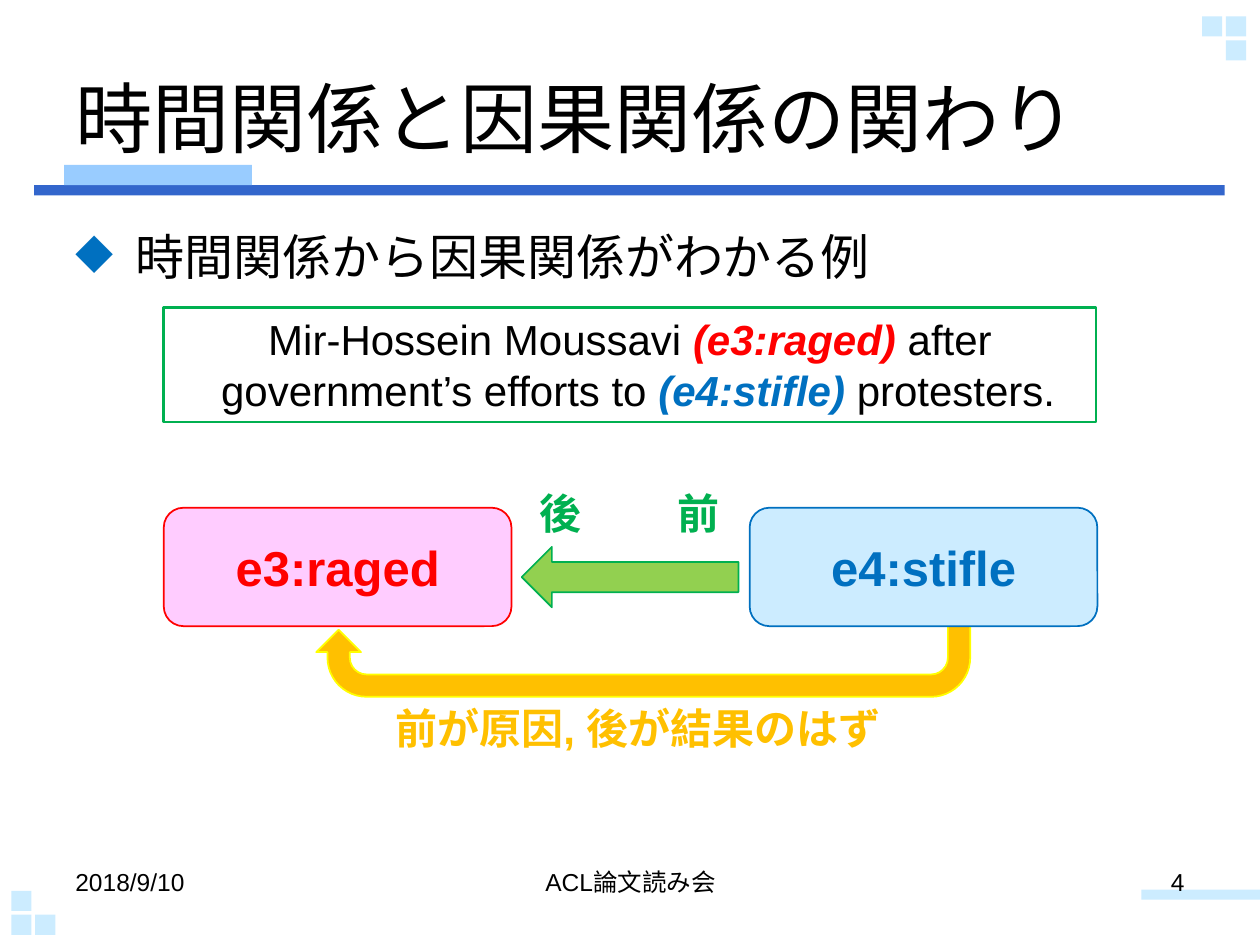
from lxml import etree
from pptx import Presentation
from pptx.dml.color import RGBColor
from pptx.enum import shapes, text
from pptx.oxml import ns
from pptx.util import Inches, Pt

COLORS = {
    "black": "000000", "bar": "3366CC", "tab": "99CCFF", "pale": "CCECFF",
    "pink": "FFCCFF", "red": "FF0000", "blue": "0070C0", "green": "00B050",
    "lime": "92D050", "gold": "FFC000", "yellow": "FFFF00",
}
LATIN, JAPANESE = "Arial", "Noto Sans CJK JP"
SHAPE, ALIGN, ANCHOR = shapes.MSO_SHAPE, text.PP_ALIGN, text.MSO_ANCHOR


def color(name):
    """Look up a named colour."""
    return RGBColor.from_string(COLORS[name])


def add_box(slide, kind, box, fill=None, line=None, width=1):
    """Add a flat preset shape in box (left, top, width, height in inches)."""
    shape = slide.shapes.add_shape(kind, *map(Inches, box))
    shape.shadow.inherit = False
    if fill:
        shape.fill.solid()
        shape.fill.fore_color.rgb = color(fill)
    else:
        shape.fill.background()
    if line:
        shape.line.color.rgb = color(line)
        shape.line.width = Pt(width)
    else:
        shape.line.fill.background()
    return shape


def format_run(run, size, tint="black", font=LATIN, bold=False, italic=False):
    """Set the look of one run, with a Japanese fallback font."""
    run.font.size, run.font.name = Pt(size), font
    run.font.bold, run.font.italic = bold, italic
    run.font.color.rgb = color(tint)
    properties = run._r.get_or_add_rPr()
    etree.SubElement(properties, ns.qn("a:ea")).set("typeface", JAPANESE)


def write(shape, words, size, align=ALIGN.LEFT, anchor=ANCHOR.TOP, **look):
    """Fill a shape with one formatted paragraph and return it."""
    frame = shape.text_frame
    frame.text = words
    frame.word_wrap = True
    frame.vertical_anchor = anchor
    paragraph = frame.paragraphs[0]
    paragraph.alignment = align
    for run in paragraph.runs:
        format_run(run, size, **look)
    return paragraph


def add_label(slide, box, words, size, **options):
    """Add a text box holding one paragraph."""
    return write(slide.shapes.add_textbox(*map(Inches, box)), words, size, **options)


def hang(paragraph, indent):
    """Give a paragraph a hanging indent in inches."""
    properties = paragraph._p.get_or_add_pPr()
    properties.set("marL", str(Inches(indent)))
    properties.set("indent", str(-Inches(indent)))
    return properties


def add_squares(slide, left, top, cells):
    """Place small corner squares on a grid of (column, row) cells."""
    size, pitch = 0.16, 0.19
    for column, row in cells:
        add_box(slide, SHAPE.RECTANGLE,
                (left + column * pitch, top + row * pitch, size, size), "pale")


def add_decoration(slide):
    """Draw the title rule, footer bar and corner squares."""
    for box, fill in [((0.27, 1.47, 9.45, 0.08), "bar"),
                      ((0.51, 1.31, 1.49, 0.16), "tab"),
                      ((9.06, 7.06, 0.94, 0.08), "pale")]:
        add_box(slide, SHAPE.RECTANGLE, box, fill)
    add_squares(slide, 9.54, 0.13, [(0, 0), (1, 0), (1, 1)])
    add_squares(slide, 0.09, 7.07, [(0, 0), (0, 1), (1, 1)])


def add_bullet(slide, box, words):
    """Add the diamond bullet line."""
    paragraph = add_label(slide, box, words, 28, font=JAPANESE)
    properties = hang(paragraph, 0.48)
    tint = etree.SubElement(properties, ns.qn("a:buClr"))
    etree.SubElement(tint, ns.qn("a:srgbClr")).set("val", COLORS["blue"])
    etree.SubElement(properties, ns.qn("a:buChar")).set("char", "◆")


def add_example(slide, box):
    """Add the framed example sentence with its marked events."""
    shape = add_box(slide, SHAPE.RECTANGLE, box, line="green", width=1.5)
    paragraph = write(shape, "", 24, align=ALIGN.CENTER)
    hang(paragraph, 0.13)
    for words, tint in [("Mir-Hossein Moussavi ", "black"), ("(e3:raged) ", "red"),
                        ("after government’s efforts to ", "black"),
                        ("(e4:stifle) ", "blue"), ("protesters.", "black")]:
        run = paragraph.add_run()
        run.text = words
        marked = tint != "black"
        format_run(run, 24, tint, bold=marked, italic=marked)


def add_relation(slide, left, top, width):
    """Draw the two events with their time arrow and cause arrow."""
    event_width, event_height = 2.76, 0.94
    cause = add_box(slide, SHAPE.U_TURN_ARROW,
                    (left + 1.21, top + 0.79, 5.19, 0.71), "gold", "yellow")
    cause.rotation = 180
    for x, words, fill, tint in [
            (left, "e3:raged", "pink", "red"),
            (left + width - event_width, "e4:stifle", "pale", "blue")]:
        event = add_box(slide, SHAPE.ROUNDED_RECTANGLE,
                        (x, top, event_width, event_height), fill, tint)
        write(event, words, 28, align=ALIGN.CENTER, anchor=ANCHOR.MIDDLE,
              tint=tint, bold=True)
    for x, words in [(2.88, "後"), (3.98, "前")]:
        add_label(slide, (left + x, top - 0.21, 0.54, 0.5), words, 24,
                  tint="green", font=JAPANESE, bold=True)
    add_label(slide, (left + 1.74, top + 1.5, 4.13, 0.5),
              "前が原因, 後が結果のはず", 24, tint="gold", bold=True)
    add_box(slide, SHAPE.LEFT_ARROW, (left + 2.84, top + 0.31, 1.72, 0.48),
            "lime", "green")


def add_footer(slide, top, height):
    """Add the date, meeting name and slide number."""
    for left, width, words, align in [
            (0.5, 2.33, "2018/9/10", ALIGN.LEFT),
            (3.42, 3.17, "ACL論文読み会", ALIGN.CENTER),
            (7.17, 2.33, "4", ALIGN.RIGHT)]:
        add_label(slide, (left, top, width, height), words, 14, align=align)


def main():
    """Build and save the slide."""
    presentation = Presentation()
    presentation.slide_width, presentation.slide_height = Inches(10), Inches(7.5)
    slide = presentation.slides.add_slide(presentation.slide_layouts[6])
    add_decoration(slide)
    add_label(slide, (0.5, 0.3, 9, 1.25), "時間関係と因果関係の関わり", 44,
              anchor=ANCHOR.MIDDLE, font=JAPANESE)
    add_bullet(slide, (0.5, 1.75, 9, 4.95), "時間関係から因果関係がわかる例")
    add_example(slide, (1.3, 2.44, 7.4, 0.91))
    add_relation(slide, 1.3, 4.03, 7.41)
    add_footer(slide, 6.83, 0.52)
    presentation.save("out.pptx")


if __name__ == "__main__":
    main()
